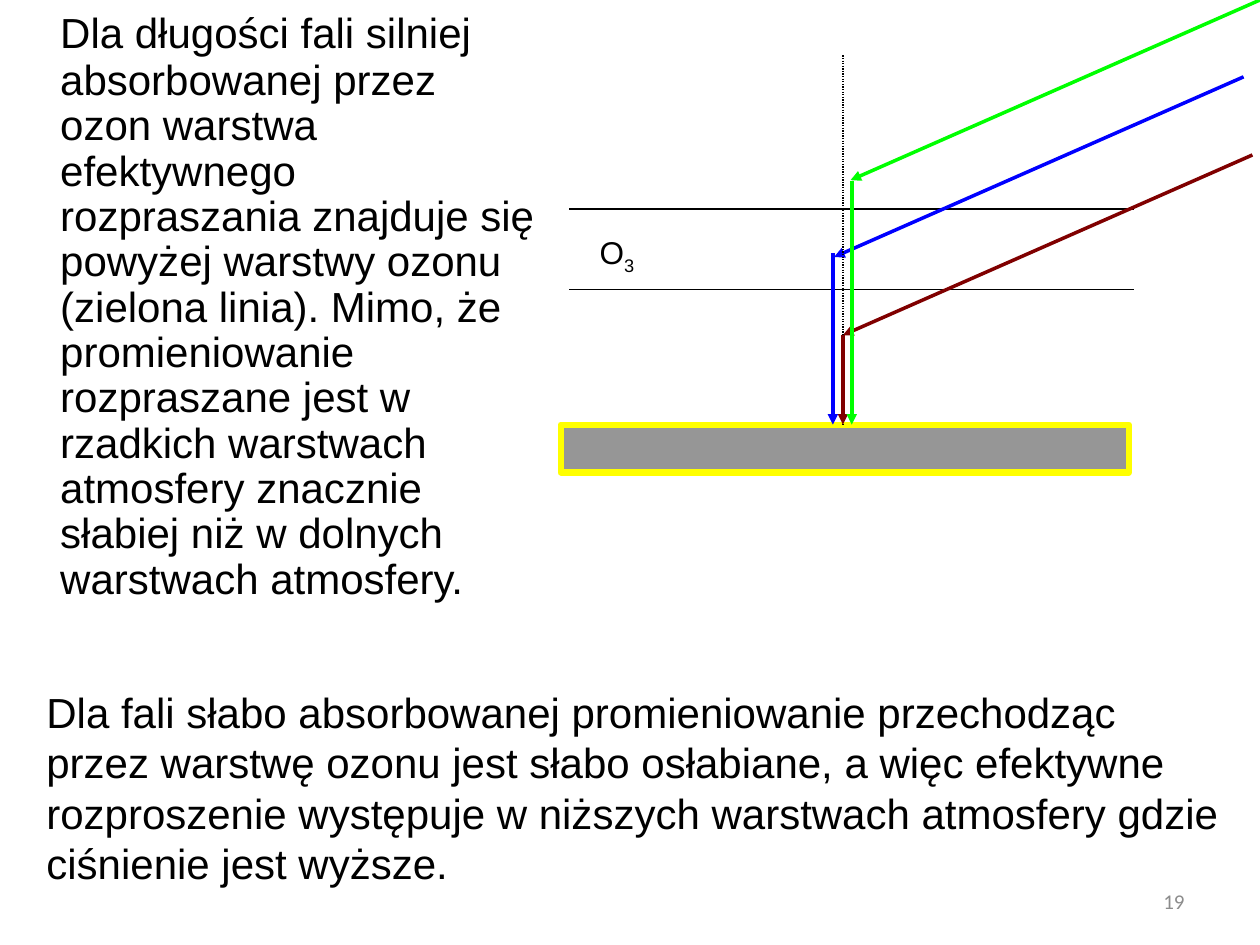
from lxml import etree
from pptx import Presentation
from pptx import util as u
from pptx.dml.color import RGBColor
from pptx.enum import dml, shapes, text
from pptx.oxml.ns import qn

COLUMNS, ROWS = 100, 75


def color(value):
    return RGBColor.from_string(value)


def apply(target, values):
    for name, value in values.items():
        setattr(target, name, value)


class Sheet:
    """Draws styled elements on one page by columns and rows."""

    ink = "000000"
    font = "Arial"

    def __init__(self, deck):
        self.page = deck.slides.add_slide(deck.slide_layouts[6])
        self.column = deck.slide_width / COLUMNS
        self.row = deck.slide_height / ROWS

    def place(self, *lengths):
        steps = (self.column, self.row) * 2
        return [u.Emu(round(n * step)) for n, step in zip(lengths, steps)]

    def span(self, para, words, size=24, font=None, ink=None, baseline=None):
        span = para.add_run()
        span.text = words
        apply(span.font, {"size": u.Pt(size), "name": font or self.font})
        span.font.color.rgb = color(ink or self.ink)
        if baseline:
            span.font._element.set("baseline", str(baseline))

    def label(self, area, spans, frame=None, para=None, hanging=None):
        box = self.page.shapes.add_textbox(*self.place(*area))
        apply(box.text_frame, {"word_wrap": True, **(frame or {})})
        paragraph = box.text_frame.paragraphs[0]
        apply(paragraph, para or {})
        if hanging:
            indent = paragraph._p.get_or_add_pPr()
            indent.set("marL", str(hanging))
            indent.set("indent", str(-hanging))
        for span in spans:
            self.span(paragraph, **span)

    def block(self, area, fill, edge, width):
        block = self.page.shapes.add_shape(
            shapes.MSO_SHAPE.RECTANGLE, *self.place(*area))
        block.shadow.inherit = False
        block.fill.solid()
        block.fill.fore_color.rgb = color(fill)
        block.line.color.rgb = color(edge)
        block.line.width = u.Pt(width)

    def line(self, start, end, ink=None, width=0.75, dash=None, arrow=False):
        line = self.page.shapes.add_connector(
            shapes.MSO_CONNECTOR.STRAIGHT, *self.place(*start, *end))
        line.line.color.rgb = color(ink or self.ink)
        apply(line.line, {"width": u.Pt(width), "dash_style": dash})
        if arrow:
            stroke = line.line._get_or_add_ln()
            etree.SubElement(stroke, qn("a:tailEnd"), type="triangle")
        etree.SubElement(line._element.spPr, qn("a:effectLst"))

    def arrow(self, start, end, ink):
        self.line(start, end, ink, width=2, arrow=True)


def main():
    deck = Presentation()
    apply(deck, {"slide_width": u.Inches(10), "slide_height": u.Inches(7.5)})
    sheet = Sheet(deck)

    sheet.label(
        (71.7, 69.5, 23.3, 4),
        [{"words": "19", "size": 12, "font": "Calibri", "ink": "8C8C8C"}],
        {"vertical_anchor": text.MSO_ANCHOR.MIDDLE},
        {"alignment": text.PP_ALIGN.RIGHT})
    sheet.label(
        (0, 0, 43.7, 49.5),
        [{"words": "\t", "size": 28, "font": "Calibri"},
         {"words": "Dla długości fali silniej absorbowanej przez ozon warstwa "
                   "efektywnego rozpraszania znajduje się powyżej warstwy ozonu "
                   "(zielona linia). Mimo, że promieniowanie rozpraszane jest w "
                   "rzadkich warstwach atmosfery znacznie słabiej niż w dolnych "
                   "warstwach atmosfery."}],
        para={"line_spacing": 0.9, "space_before": u.Pt(5)},
        hanging=u.Inches(0.38))

    ground = 33.7
    sheet.block((44.5, ground, 45.1, 3.8), "969696", "FFFF00", 3.5)
    for ozone_edge in (16.6, 23):
        sheet.line((45.2, ozone_edge), (90, ozone_edge))

    ray_width, ray_drop = 32.5, 14.3
    rays = [("0000FF", 98.7, 6.1, 66.1, 20.1),
            ("800000", 99.4, 12.3, 66.9, 26.6),
            ("00FF00", 100, 0, 67.6, 14.4)]
    for ink, left, top, _, _ in rays:
        sheet.arrow((left, top), (left - ray_width, top + ray_drop), ink)
    sheet.line((66.9, 4.4), (66.9, ground), dash=dml.MSO_LINE.ROUND_DOT)
    for ink, _, _, fall, top in rays:
        sheet.arrow((fall, top), (fall, ground), ink)

    sheet.label(
        (46.6, 18, 5.8, 4),
        [{"words": "O", "size": 18},
         {"words": "3", "size": 18, "baseline": -25000}],
        para={"space_before": u.Pt(9)})
    sheet.label(
        (2.7, 54, 95.3, 21.7),
        [{"words": "Dla fali słabo absorbowanej promieniowanie przechodząc przez "
                   "warstwę ozonu jest słabo osłabiane, a więc efektywne "
                   "rozproszenie występuje w niższych warstwach atmosfery gdzie "
                   "ciśnienie jest wyższe."}],
        para={"space_before": u.Pt(5)})

    deck.save("out.pptx")


if __name__ == "__main__":
    main()
